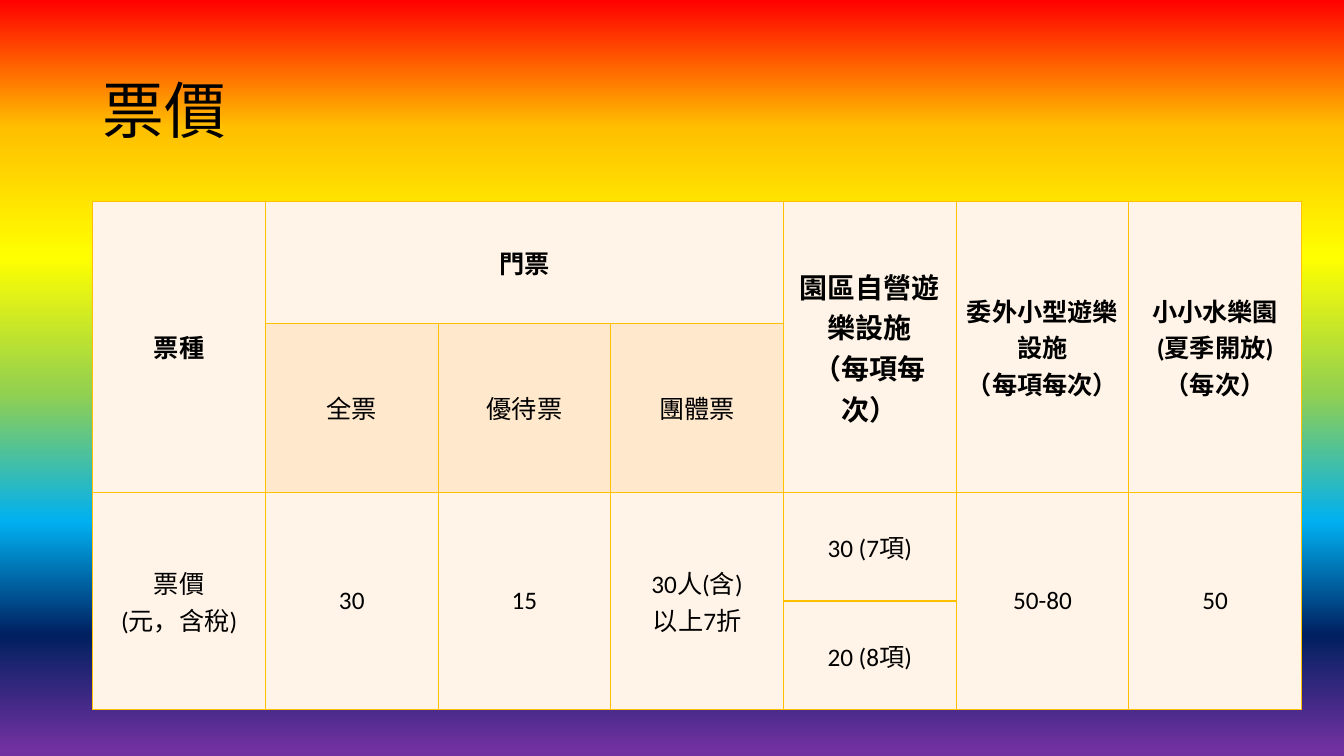
from lxml.etree import SubElement
from pptx import Presentation
from pptx.dml.color import RGBColor
from pptx.enum.text import MSO_ANCHOR as Anchor, PP_ALIGN as Align
from pptx.oxml.ns import qn
from pptx.util import Inches, Pt

WIDTH, HEIGHT = Inches(13.33), Inches(7.5)
LEFT = Inches(0.92)
BODY_FONT, HAN_FONT = "Calibri", "Noto Sans CJK JP"
BLACK = RGBColor(0x00, 0x00, 0x00)
GOLD = RGBColor(0xFF, 0xC0, 0x00)
CREAM = RGBColor(0xFF, 0xF4, 0xE7)
PEACH = RGBColor(0xFF, 0xE8, 0xCC)
RAINBOW = {
    0: RGBColor(0xFF, 0x00, 0x00),
    17: GOLD,
    34: RGBColor(0xFF, 0xFF, 0x00),
    52: RGBColor(0x92, 0xD0, 0x50),
    69: RGBColor(0x00, 0xB0, 0xF0),
    84: RGBColor(0x00, 0x20, 0x60),
    99: RGBColor(0x70, 0x30, 0xA0),
}

COLUMNS = 7
ROW_HEIGHTS = [1.21, 1.66, 1.08, 1.08]
# row, column, rows spanned, columns spanned, text, format
HEADING = {"bold": True, "size": Pt(18)}
LARGE_HEADING = {"bold": True, "size": Pt(20)}
PLAIN = {"bold": False, "size": Pt(18)}
FARES = [
    (0, 0, 2, 1, "票種", HEADING),
    (0, 1, 1, 3, "門票", HEADING),
    (0, 4, 2, 1, "園區自營遊樂設施\n（每項每次）", LARGE_HEADING),
    (0, 5, 2, 1, "委外小型遊樂設施\n（每項每次）", HEADING),
    (0, 6, 2, 1, "小小水樂園\n(夏季開放)\n（每次）", HEADING),
    (1, 1, 1, 1, "全票", PLAIN),
    (1, 2, 1, 1, "優待票", PLAIN),
    (1, 3, 1, 1, "團體票", PLAIN),
    (2, 0, 2, 1, "票價\n(元，含稅)", PLAIN),
    (2, 1, 2, 1, "30", PLAIN),
    (2, 2, 2, 1, "15", PLAIN),
    (2, 3, 2, 1, "30人(含)\n以上7折", PLAIN),
    (2, 4, 1, 1, "30 (7項)", PLAIN),
    (2, 5, 2, 1, "50-80", PLAIN),
    (2, 6, 2, 1, "50", PLAIN),
    (3, 4, 1, 1, "20 (8項)", PLAIN),
]


def set_format(target, values):
    for name, value in values.items():
        setattr(target, name, value)


def write(para, text, latin, values):
    para.text = text
    for span in para.runs:
        set_format(span.font, {"name": latin, **values})
        span.font.color.rgb = BLACK
        SubElement(span.font._element, qn("a:ea"), typeface=HAN_FONT)


def paint_background(page):
    fill = page.background.fill
    fill.gradient()
    fill.gradient_angle = 270
    stops = next(page.element.iter(qn("a:gsLst")))
    for stop in list(stops):
        stops.remove(stop)
    for share, color in RAINBOW.items():
        stop = SubElement(stops, qn("a:gs"), pos=str(share * 1000))
        SubElement(stop, qn("a:srgbClr"), val=str(color))


def place_title(page, left, top, width, height):
    title = page.shapes.title
    set_format(title, {"left": left, "top": top, "width": width, "height": height})
    title.text_frame.vertical_anchor = Anchor.MIDDLE
    para = title.text_frame.paragraphs[0]
    set_format(para, {"alignment": Align.LEFT, "line_spacing": 0.9})
    write(para, "票價", HAN_FONT, {"size": Pt(44)})


def dress_cell(cell, color):
    """Give a cell its gold borders, narrow margins and fill."""
    properties = cell._tc.get_or_add_tcPr()
    for side in ("lnL", "lnR", "lnT", "lnB"):
        line = SubElement(properties, qn(f"a:{side}"), w=str(Pt(1)))
        solid = SubElement(line, qn("a:solidFill"))
        SubElement(solid, qn("a:srgbClr"), val=str(GOLD))
    margins = ("margin_left", "margin_right", "margin_top", "margin_bottom")
    set_format(cell, dict.fromkeys(margins, Inches(0.03)))
    cell.vertical_anchor = Anchor.MIDDLE
    cell.fill.solid()
    cell.fill.fore_color.rgb = color


def place_fares(page, left, top, width, height):
    table = page.shapes.add_table(
        len(ROW_HEIGHTS), COLUMNS, left, top, width, height).table
    set_format(table, {"first_row": False, "horz_banding": False})
    for column in table.columns:
        column.width = width // COLUMNS
    for row, share in zip(table.rows, ROW_HEIGHTS):
        row.height = int(height * share / sum(ROW_HEIGHTS))
    for r in range(len(ROW_HEIGHTS)):
        for c in range(COLUMNS):
            is_ticket_kind = r == 1 and 1 <= c <= 3
            dress_cell(table.cell(r, c), PEACH if is_ticket_kind else CREAM)
    for r, c, down, across, text, values in FARES:
        cell = table.cell(r, c)
        if down * across > 1:
            cell.merge(table.cell(r + down - 1, c + across - 1))
        para = cell.text_frame.paragraphs[0]
        para.alignment = Align.CENTER
        write(para, text, BODY_FONT, values)


def main():
    deck = Presentation()
    deck.slide_width, deck.slide_height = WIDTH, HEIGHT
    page = deck.slides.add_slide(deck.slide_layouts[5])
    paint_background(page)
    place_title(page, LEFT, Inches(0.4), Inches(11.5), Inches(1.45))
    place_fares(page, LEFT, Inches(2), Inches(11.99), Inches(5.03))
    deck.save("out.pptx")


if __name__ == "__main__":
    main()
